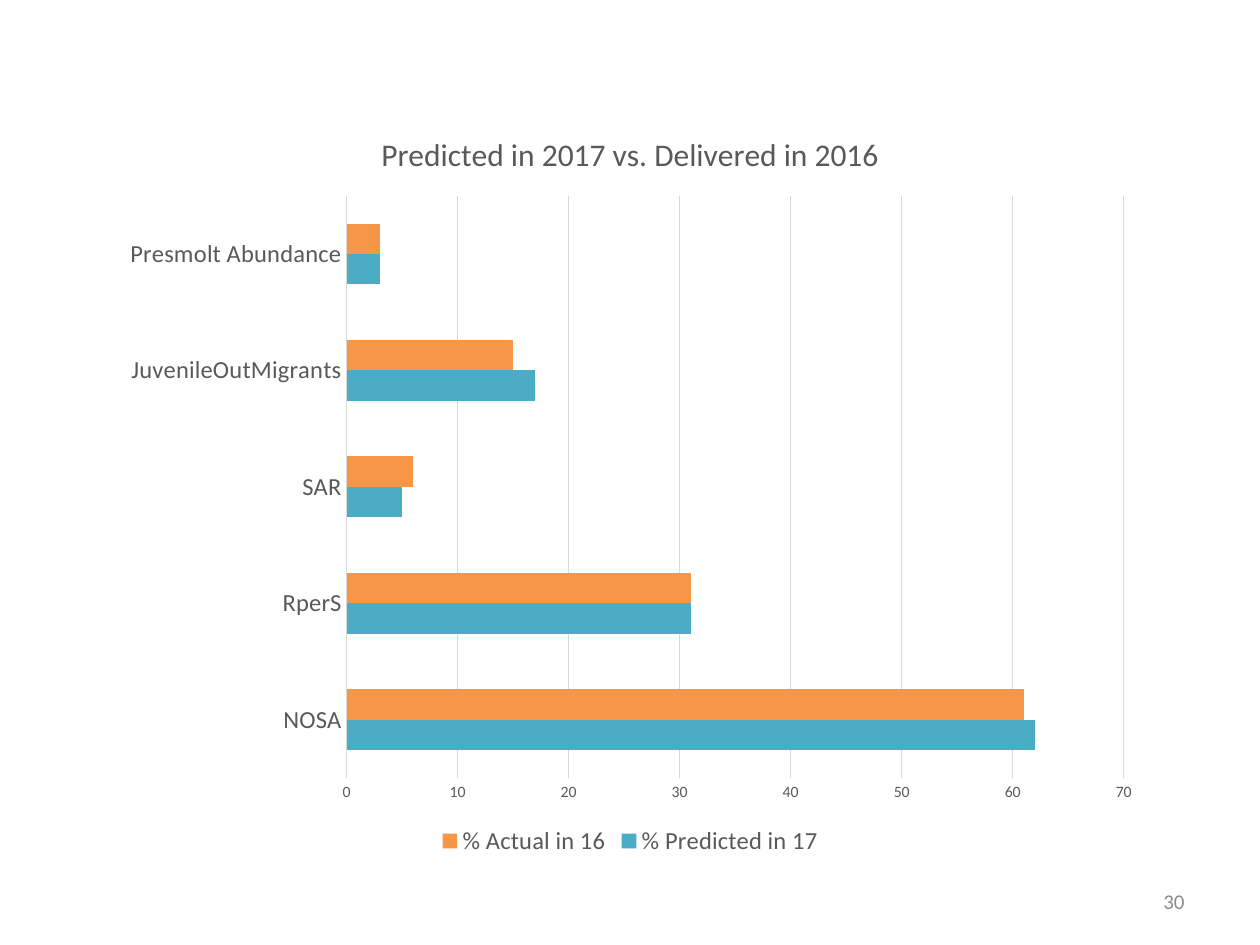
from lxml import etree
from pptx import Presentation
from pptx.chart.data import CategoryChartData
from pptx.dml.color import RGBColor
from pptx.enum import chart as ch, text as tx
from pptx.oxml.ns import qn
from pptx.util import Cm, Pt

GREY, RULE = "595959", "D9D9D9"


def tint(part, shade):
    """Give a font or line colour, or a fill, the hex shade."""
    if hasattr(part, "solid"):
        part.solid()
        part.fore_color.rgb = RGBColor.from_string(shade)
    else:
        part.color.rgb = RGBColor.from_string(shade)


def style(font, size, shade=GREY):
    """Set a font to Calibri in the given size and shade."""
    font.name, font.size, font.bold = "Calibri", Pt(size), False
    tint(font, shade)


def rule(line):
    """Make a line thin and light grey."""
    line.width = Pt(0.75)
    tint(line, RULE)


def place(plot, **spans):
    """Fix the inner plot area as fractions of the chart."""
    old = plot.find(qn("c:layout"))
    if old is not None:
        plot.remove(old)
    layout = etree.Element(qn("c:layout"))
    plot.insert(0, layout)
    inner = etree.SubElement(layout, qn("c:manualLayout"))
    modes = dict(layoutTarget="inner", xMode="edge", yMode="edge")
    for tag, val in {**modes, **spans}.items():
        etree.SubElement(inner, qn("c:" + tag)).set("val", str(val))


def add_bars(slide, left, top, width, height):
    """Draw the bar chart of predicted and delivered shares."""
    data = CategoryChartData()
    data.categories = ["NOSA", "RperS", "SAR", "JuvenileOutMigrants", "Presmolt Abundance"]
    data.add_series("% Predicted in 17", (62, 31, 5, 17, 3))
    data.add_series("% Actual in 16", (61, 31, 6, 15, 3))
    chart = slide.shapes.add_chart(
        ch.XL_CHART_TYPE.BAR_CLUSTERED, left, top, width, height, data).chart
    style(chart.font, 10, "000000")

    title = chart.chart_title
    title.text_frame.text = "Predicted in 2017 vs. Delivered in 2016"
    style(title.text_frame.paragraphs[0].runs[0].font, 18)
    title.include_in_layout = False

    chart.has_legend = True
    chart.legend.position = ch.XL_LEGEND_POSITION.BOTTOM
    chart.legend.include_in_layout = False
    style(chart.legend.font, 14)

    plot = chart.plots[0]
    plot.gap_width, plot.overlap, plot.vary_by_categories = 182, 0, False
    for bars, shade in zip(plot.series, ("4BACC6", "F79646")):
        tint(bars.format.fill, shade)

    cats, vals = chart.category_axis, chart.value_axis
    for axis, size in ((cats, 14), (vals, 9)):
        axis.major_tick_mark = axis.minor_tick_mark = ch.XL_TICK_MARK.NONE
        style(axis.tick_labels.font, size)
    rule(cats.format.line)
    vals.format.line.fill.background()
    vals.has_major_gridlines = True
    rule(vals.major_gridlines.format.line)
    vals.minimum_scale, vals.maximum_scale, vals.major_unit = 0, 70, 10
    place(plot._element.getparent(), x=0.23, y=0.12, w=0.74, h=0.77)


def add_number(slide, left, top, width, height):
    """Write the page number at the right of its box."""
    frame = slide.shapes.add_textbox(left, top, width, height).text_frame
    frame.word_wrap = True
    frame.vertical_anchor = tx.MSO_ANCHOR.MIDDLE
    frame.text = "30"
    para = frame.paragraphs[0]
    para.alignment = tx.PP_ALIGN.RIGHT
    style(para.runs[0].font, 12, "8C8C8C")


def main():
    """Build the slide and save it."""
    deck = Presentation()
    deck.slide_width, deck.slide_height = Cm(25.4), Cm(19.05)
    slide = deck.slides.add_slide(deck.slide_layouts[6])
    add_bars(slide, Cm(2.12), Cm(2.12), Cm(21.17), Cm(15.24))
    add_number(slide, Cm(18.2), Cm(17.66), Cm(5.93), Cm(1.01))
    deck.save("out.pptx")


if __name__ == "__main__":
    main()
